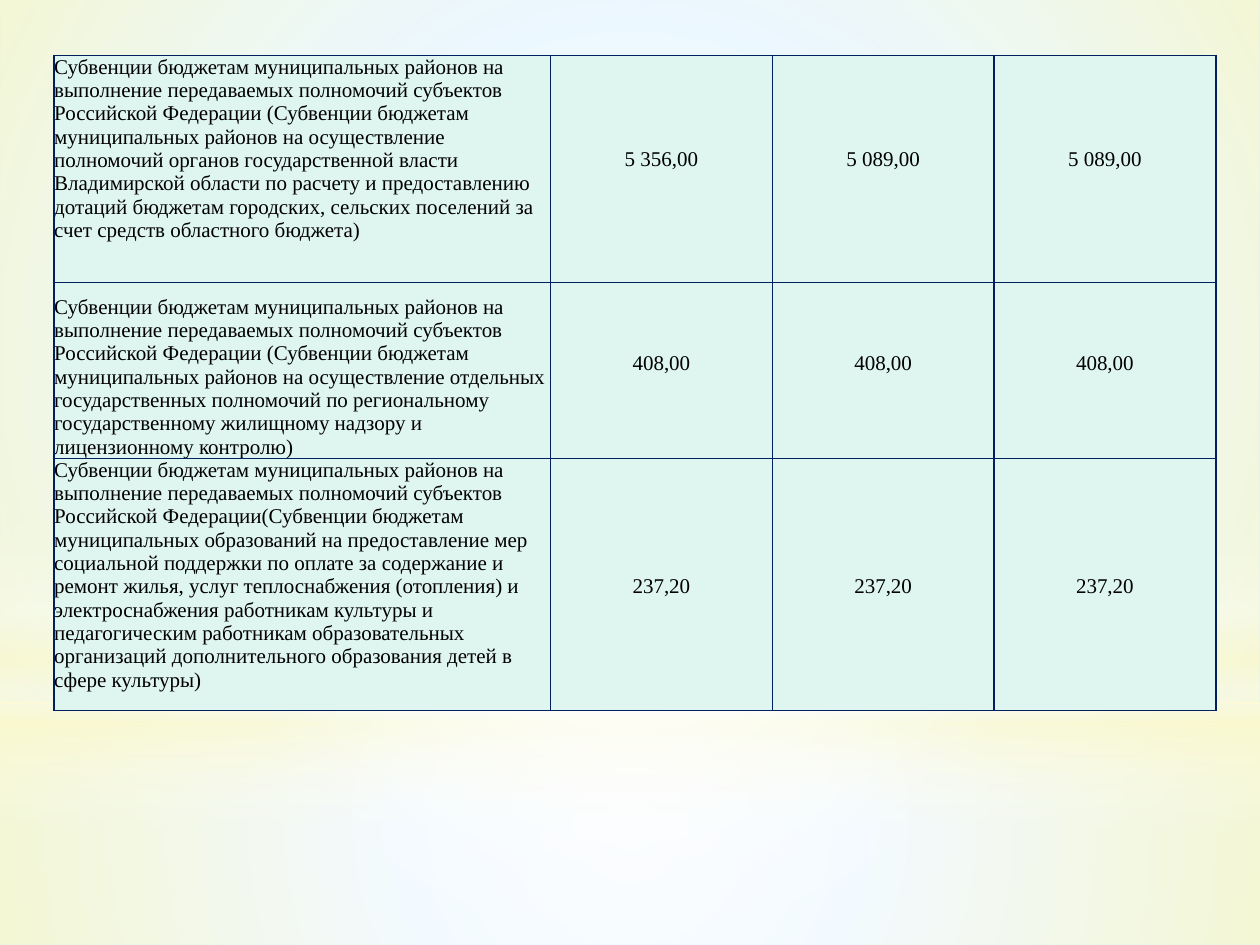
import pptx
import pptx.dml.color
import pptx.enum.shapes
import pptx.enum.text
import pptx.oxml
import pptx.oxml.ns
import pptx.util

Inches = pptx.util.Inches
Shape = pptx.enum.shapes.MSO_SHAPE
Align = pptx.enum.text.PP_ALIGN
Anchor = pptx.enum.text.MSO_ANCHOR
NAMESPACE = pptx.oxml.ns.nsdecls("a")
LINE_HEIGHT = 0.184

SUBVENTION = (
    "Субвенции бюджетам муниципальных районов на выполнение передаваемых "
    "полномочий субъектов Российской Федерации"
)
SUBVENTIONS = [
    (
        SUBVENTION + " (Субвенции бюджетам муниципальных районов на осуществление "
        "полномочий органов государственной власти Владимирской области по расчету "
        "и предоставлению дотаций бюджетам городских, сельских поселений за счет "
        "средств областного бюджета)",
        ["5 356,00", "5 089,00", "5 089,00"], 1.8, Anchor.TOP, 4,
    ),
    (
        SUBVENTION + " (Субвенции бюджетам муниципальных районов на осуществление "
        "отдельных государственных полномочий по региональному государственному "
        "жилищному надзору и лицензионному контролю)",
        ["408,00"] * 3, 1.4, Anchor.BOTTOM, 3,
    ),
    (
        SUBVENTION + "(Субвенции бюджетам муниципальных образований на "
        "предоставление мер социальной поддержки по оплате за содержание и ремонт "
        "жилья, услуг теплоснабжения (отопления) и электроснабжения работникам "
        "культуры и педагогическим работникам образовательных организаций "
        "дополнительного образования детей в сфере культуры)",
        ["237,20"] * 3, 2.0, Anchor.TOP, 5,
    ),
]
RADIAL = (
    '<a:path path="circle">'
    '<a:fillToRect l="50000" t="50000" r="50000" b="50000"/></a:path>'
)
VERTICAL = '<a:lin ang="5400000" scaled="0"/>'


def color(value):
    return pptx.dml.color.RGBColor.from_string(value)


def write(frame, text, size=12, font="Times New Roman", ink="000000", align=Align.LEFT):
    frame.word_wrap = True
    paragraph = frame.paragraphs[0]
    paragraph.alignment = align
    run = paragraph.add_run()
    run.text = text
    run.font.size = pptx.util.Pt(size)
    run.font.name = font
    run.font.color.rgb = color(ink)


class BudgetSlide:
    cell_fill = "DFF5EF"
    border = "002060"
    backdrop = "CCECFF"

    def __init__(self, deck):
        self.slide = deck.slides.add_slide(deck.slide_layouts[6])
        self.slide.background.fill.solid()
        self.slide.background.fill.fore_color.rgb = color(self.backdrop)

    def glow(self, kind, left, top, width, height, stops, direction=RADIAL):
        glow = self.slide.shapes.add_shape(
            kind, Inches(left), Inches(top), Inches(width), Inches(height)
        )
        glow.shadow.inherit = False
        glow.line.fill.background()
        glow.fill.background()
        stop_xml = "".join(
            f'<a:gs pos="{position * 1000}"><a:srgbClr val="{tint}">'
            f'<a:alpha val="{opacity * 1000}"/></a:srgbClr></a:gs>'
            for position, tint, opacity in stops
        )
        gradient = pptx.oxml.parse_xml(
            f'<a:gradFill {NAMESPACE} rotWithShape="1">'
            f"<a:gsLst>{stop_xml}</a:gsLst>{direction}</a:gradFill>"
        )
        properties = glow.element.spPr
        properties.replace(properties.find(pptx.oxml.ns.qn("a:noFill")), gradient)

    def cell(self, cell, text, anchor=Anchor.TOP, top=0, align=Align.LEFT):
        properties = cell._tc.get_or_add_tcPr()
        for side in ("lnL", "lnR", "lnT", "lnB"):
            properties.append(pptx.oxml.parse_xml(
                f'<a:{side} {NAMESPACE} w="12700"><a:solidFill>'
                f'<a:srgbClr val="{self.border}"/></a:solidFill></a:{side}>'
            ))
        cell.fill.solid()
        cell.fill.fore_color.rgb = color(self.cell_fill)
        cell.margin_left = cell.margin_right = cell.margin_bottom = 0
        cell.margin_top = Inches(top)
        cell.vertical_anchor = anchor
        write(cell.text_frame, text, align=align)

    def subvention_table(self, left, top, widths, subventions):
        heights = [subvention[2] for subvention in subventions]
        table = self.slide.shapes.add_table(
            len(subventions), len(widths), Inches(left), Inches(top),
            Inches(sum(widths)), Inches(sum(heights)),
        ).table
        table.first_row = table.horz_banding = False
        for column, width in zip(table.columns, widths):
            column.width = Inches(width)
        for index, (purpose, amounts, height, anchor, lines) in enumerate(subventions):
            table.rows[index].height = Inches(height)
            self.cell(table.cell(index, 0), purpose, anchor=anchor)
            for year, amount in enumerate(amounts, 1):
                self.cell(table.cell(index, year), amount,
                          top=lines * LINE_HEIGHT, align=Align.CENTER)


def main():
    deck = pptx.Presentation()
    deck.slide_width, deck.slide_height = Inches(10), Inches(7.5)
    budget = BudgetSlide(deck)
    white, cream = "FFFFFF", "FEFAC9"
    budget.glow(Shape.RECTANGLE, 0, 5.58, 10, 1.92,
                [(0, white, 91), (37, white, 76), (100, cream, 79)])
    budget.glow(Shape.RECTANGLE, 0, 0, 10, 5.58,
                [(0, white, 89), (48, white, 62), (100, cream, 79)])
    budget.glow(Shape.RECTANGLE, 0, 4.12, 10, 2.5,
                [(0, white, 0), (29, white, 30), (45, cream, 40),
                 (55, white, 26), (65, cream, 60), (100, white, 0)], VERTICAL)
    budget.glow(Shape.OVAL, 0, 1.75, 10, 5.58, [(0, white, 100), (56, white, 0)])
    budget.subvention_table(0.43, 0.44, [3.94] + [1.76] * 3, SUBVENTIONS)
    deck.save("out.pptx")


if __name__ == "__main__":
    main()
